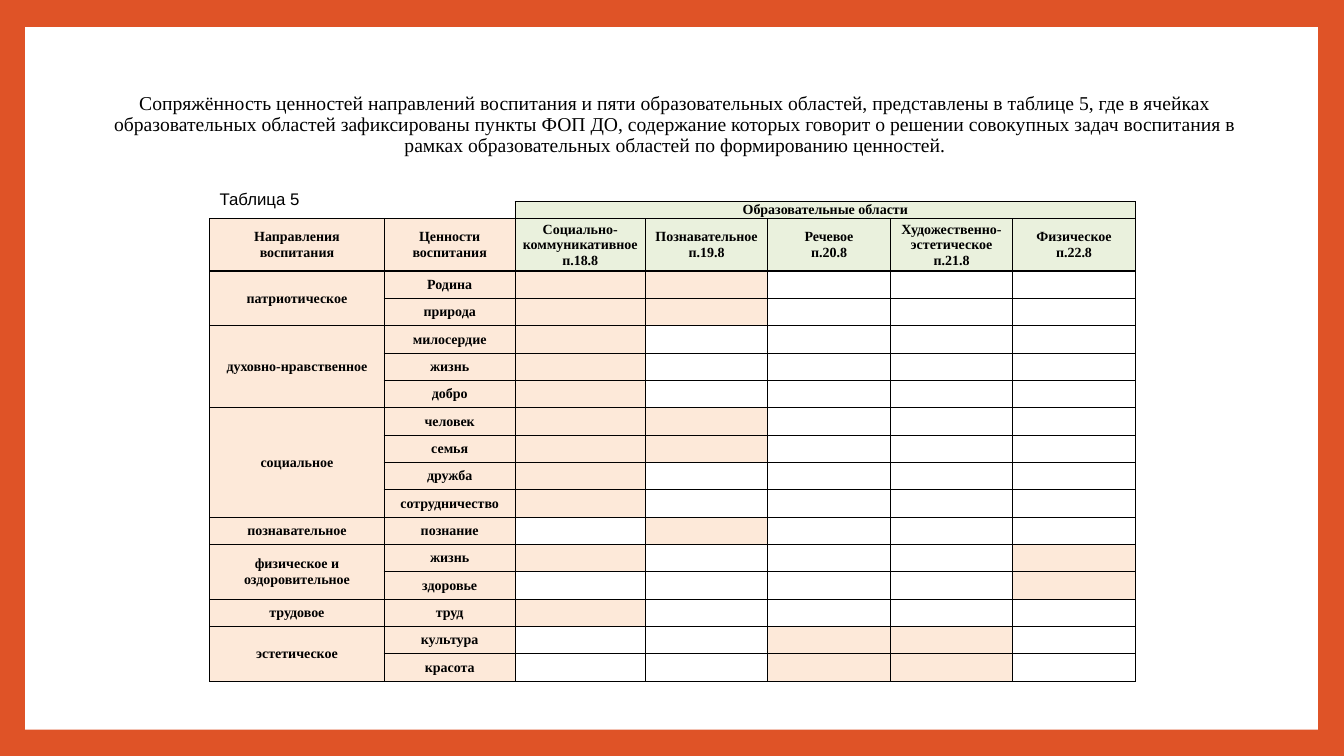
"""Build a slide with a table linking upbringing values to educational areas."""
import lxml.etree
import pptx
import pptx.dml.color
import pptx.enum.shapes
import pptx.enum.text
import pptx.oxml.ns
import pptx.util

INTRO = (
    "Сопряжённость ценностей направлений воспитания и пяти образовательных областей, "
    "представлены в таблице 5, где в ячейках образовательных областей зафиксированы "
    "пункты ФОП ДО, содержание которых говорит о решении совокупных задач воспитания "
    "в рамках образовательных областей по формированию ценностей."
)
CAPTION = "Таблица 5"
AREAS_TITLE = "Образовательные области"
VALUE_HEADINGS = ["Направления воспитания", "Ценности воспитания"]
AREAS = [
    "Социально-коммуникативное\nп.18.8",
    "Познавательное\nп.19.8",
    "Речевое\nп.20.8",
    "Художественно-эстетическое\nп.21.8",
    "Физическое\nп.22.8",
]
DIRECTIONS = [
    ("патриотическое", [("Родина", {0, 1}), ("природа", {0, 1})]),
    ("духовно-нравственное", [("милосердие", {0}), ("жизнь", {0}), ("добро", {0})]),
    ("социальное", [("человек", {0, 1}), ("семья", {0, 1}),
                    ("дружба", {0}), ("сотрудничество", {0})]),
    ("познавательное", [("познание", {1})]),
    ("физическое и оздоровительное", [("жизнь", {0, 4}), ("здоровье", {4})]),
    ("трудовое", [("труд", {0})]),
    ("эстетическое", [("культура", {2, 3}), ("красота", {2, 3})]),
]

Inches, Pt = pptx.util.Inches, pptx.util.Pt
CENTER = pptx.enum.text.PP_ALIGN.CENTER
LEFT = pptx.enum.text.PP_ALIGN.LEFT
MIDDLE = pptx.enum.text.MSO_ANCHOR.MIDDLE
TOP = pptx.enum.text.MSO_ANCHOR.TOP
THEME = {
    "frame": "DF5327", "paper": "FFFFFF", "ink": "000000",
    "value": "FDE9D9", "area": "EAF1DD",
    "serif": "Times New Roman", "sans": "Arial",
    "intro": 14, "caption": 12, "cell": 10, "border": 1,
}
CELL_FORMAT = {
    "margin_left": Inches(0.06), "margin_right": Inches(0.06),
    "margin_top": 0, "margin_bottom": 0, "vertical_anchor": MIDDLE,
}
TABLE_BOX = (2.08, 2, 9.18, 4.76)
LEAD_WIDTHS = [1.73, 1.3, 1.29]
HEAD_HEIGHTS = [0.17, 0.52]


def color(name):
    return pptx.dml.color.RGBColor.from_string(THEME[name])


def apply_format(target, values):
    for name, value in values.items():
        setattr(target, name, value)


def write(frame, text, size, font, bold=False, align=CENTER, spacing=None):
    frame.text = text
    for paragraph in frame.paragraphs:
        apply_format(paragraph, {"alignment": align, "line_spacing": spacing})
        for run in paragraph.runs:
            apply_format(run.font, {"size": Pt(THEME[size]), "name": THEME[font], "bold": bold})
            run.font.color.rgb = color("ink")
        if not text:
            lxml.etree.SubElement(paragraph._p, pptx.oxml.ns.qn("a:endParaRPr"),
                                  sz=str(THEME[size] * 100))


def add_text(slide, box, text, size, font, frame_format, **style):
    frame = slide.shapes.add_textbox(*map(Inches, box)).text_frame
    apply_format(frame, frame_format)
    write(frame, text, size, font, **style)


def set_borders(cell, sides):
    properties = cell._tc.get_or_add_tcPr()
    for index, side in enumerate("LRTB"):
        line = lxml.etree.Element(pptx.oxml.ns.qn("a:ln" + side), w=str(Pt(THEME["border"])))
        kind = "a:solidFill" if side in sides else "a:noFill"
        fill = lxml.etree.SubElement(line, pptx.oxml.ns.qn(kind))
        if side in sides:
            lxml.etree.SubElement(fill, pptx.oxml.ns.qn("a:srgbClr"), val=THEME["ink"])
        properties.insert(index, line)


def fill_cell(cell, text="", fill=None, sides="LRTB"):
    write(cell.text_frame, text, "cell", "serif", bold=True)
    apply_format(cell, CELL_FORMAT)
    if fill:
        cell.fill.solid()
        cell.fill.fore_color.rgb = color(fill)
    else:
        cell.fill.background()
    set_borders(cell, sides)


def table_rows():
    yield [("", None, "B"), ("", None, "RB"), (AREAS_TITLE, "area")] + [("", "area")] * 4
    yield [(text, "value") for text in VALUE_HEADINGS] + [(text, "area") for text in AREAS]
    for direction, values in DIRECTIONS:
        for index, (value, marked) in enumerate(values):
            marks = [("", "value" if area in marked else None) for area in range(len(AREAS))]
            yield [("" if index else direction, "value"), (value, "value")] + marks


def add_values_table(slide):
    rows = list(table_rows())
    columns = len(rows[0])
    table = slide.shapes.add_table(len(rows), columns, *map(Inches, TABLE_BOX)).table
    apply_format(table, {"first_row": False, "horz_banding": False})
    area_count, value_count = columns - len(LEAD_WIDTHS), len(rows) - len(HEAD_HEIGHTS)
    widths = LEAD_WIDTHS + [(TABLE_BOX[2] - sum(LEAD_WIDTHS)) / area_count] * area_count
    heights = HEAD_HEIGHTS + [(TABLE_BOX[3] - sum(HEAD_HEIGHTS)) / value_count] * value_count
    for column, width in zip(table.columns, widths):
        column.width = Inches(width)
    for row, height, contents in zip(table.rows, heights, rows):
        row.height = Inches(height)
        for cell, content in zip(row.cells, contents):
            fill_cell(cell, *content)
    table.cell(0, 2).merge(table.cell(0, columns - 1))
    first = len(HEAD_HEIGHTS)
    for _, values in DIRECTIONS:
        if len(values) > 1:
            table.cell(first, 0).merge(table.cell(first + len(values) - 1, 0))
        first += len(values)


def main():
    deck = pptx.Presentation()
    apply_format(deck, {"slide_width": Inches(13.33), "slide_height": Inches(7.5)})
    slide = deck.slides.add_slide(deck.slide_layouts[6])
    slide.background.fill.solid()
    slide.background.fill.fore_color.rgb = color("frame")
    paper = slide.shapes.add_shape(pptx.enum.shapes.MSO_SHAPE.RECTANGLE,
                                   *map(Inches, (0.25, 0.27, 12.82, 6.97)))
    paper.shadow.inherit = False
    paper.fill.solid()
    paper.fill.fore_color.rgb = color("paper")
    paper.line.fill.background()
    add_text(slide, (0.92, 0.88, 11.5, 0.8), INTRO, "intro", "serif",
             {"word_wrap": True, "vertical_anchor": TOP, "margin_left": Inches(0.15)},
             spacing=0.9)
    add_values_table(slide)
    add_text(slide, (2.08, 1.82, 2, 0.3), CAPTION, "caption", "sans",
             {"word_wrap": False, "vertical_anchor": MIDDLE}, align=LEFT)
    deck.save("out.pptx")


if __name__ == "__main__":
    main()
